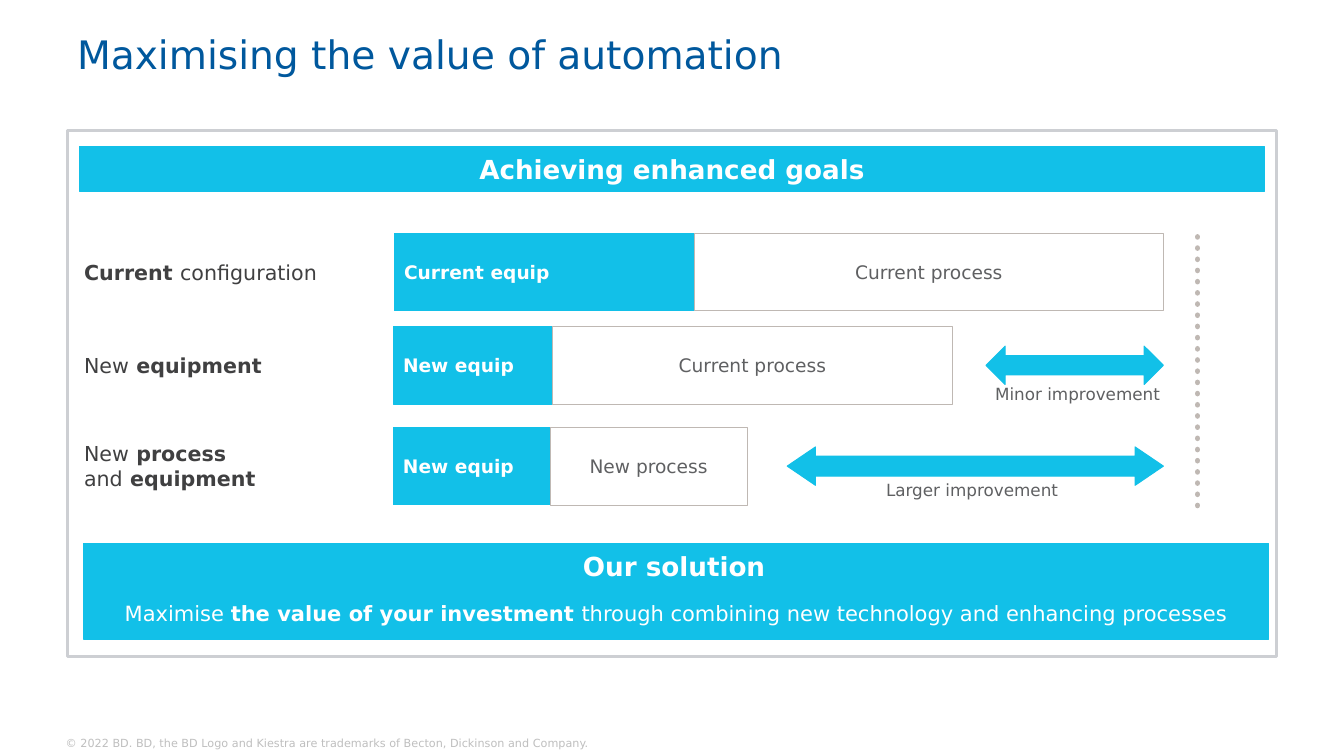
from lxml import etree
from pptx import Presentation
from pptx.dml.color import RGBColor
from pptx.enum.dml import MSO_LINE
from pptx.enum.shapes import MSO_CONNECTOR, MSO_SHAPE
from pptx.enum.text import MSO_ANCHOR, PP_ALIGN
from pptx.oxml.ns import qn
from pptx.util import Pt

RECT, ARROW = MSO_SHAPE.RECTANGLE, MSO_SHAPE.LEFT_RIGHT_ARROW
STRAIGHT, DOTTED = MSO_CONNECTOR.STRAIGHT, MSO_LINE.ROUND_DOT
LEFT, CENTER = PP_ALIGN.LEFT, PP_ALIGN.CENTER
TOP, MIDDLE = MSO_ANCHOR.TOP, MSO_ANCHOR.MIDDLE

WHITE = RGBColor(0xFF, 0xFF, 0xFF)
CYAN = RGBColor(0x12, 0xC0, 0xE8)
NAVY = RGBColor(0x00, 0x58, 0x9D)
DARK = RGBColor(0x40, 0x40, 0x41)
GREY = RGBColor(0x5F, 0x60, 0x62)
TAUPE = RGBColor(0xBF, 0xB8, 0xB3)
FRAME = RGBColor(0xCD, 0xCF, 0xD3)
PALE = RGBColor(0xBF, 0xBF, 0xBF)

FONT = "DejaVu Sans"
PAD = (7.2, 7.2, 7.2, 7.2)
NO_PAD = (0, 0, 0, 0)
GOAL_X = 831


def write(sp, lines, size, color, align=CENTER, anchor=MIDDLE, inset=PAD, bold=False):
    """Fill a shape with lines, each a string or a list of (text, bold) runs."""
    tf = sp.text_frame
    tf.word_wrap = True
    tf.vertical_anchor = anchor
    tf.margin_left, tf.margin_top, tf.margin_right, tf.margin_bottom = map(Pt, inset)
    p = tf.paragraphs[0]
    p.alignment = align
    for i, line in enumerate([lines] if isinstance(lines, str) else lines):
        if i:
            p.add_line_break()
        for text, heavy in [(line, bold)] if isinstance(line, str) else line:
            r = p.add_run()
            r.text = text
            r.font.name, r.font.size, r.font.bold = FONT, Pt(size), heavy
            r.font.color.rgb = color


def add_text(s, box, lines, size, color, **fmt):
    """Add a text box."""
    write(s.shapes.add_textbox(*map(Pt, box)), lines, size, color, **fmt)


def add_block(s, box, fill=CYAN, line=CYAN, width=0.75, kind=RECT):
    """Add a flat shape; a fill of None leaves it open."""
    sp = s.shapes.add_shape(kind, *map(Pt, box))
    sp.shadow.inherit = False
    if fill is None:
        sp.fill.background()
    else:
        sp.fill.solid()
        sp.fill.fore_color.rgb = fill
    sp.line.color.rgb = line
    sp.line.width = Pt(width)
    return sp


def add_heading(s, box, text):
    """Add a cyan heading bar."""
    write(add_block(s, box), text, 18.7, WHITE, bold=True)


def add_solution(s, box):
    """Add the closing panel with its heading and message."""
    x, y, w, h = box
    add_block(s, box)
    add_heading(s, (x, y, w - 3, 32.4), "Our solution")
    message = [("Maximise ", False), ("the value of your investment ", True),
               ("through combining new technology and enhancing processes", False)]
    write(add_block(s, (x, y + 41, w, 18)), [message], 15, WHITE, inset=NO_PAD)


def add_row(s, box, label, equip, equip_w, process, process_w):
    """Add a label followed by its equipment and process bars."""
    x, y, bar_x, h = box
    add_text(s, (x, y, 214, h), label, 14.7, DARK, align=LEFT, inset=NO_PAD)
    write(add_block(s, (bar_x, y, equip_w, h)), equip, 13.3, WHITE, align=LEFT, bold=True)
    bar = add_block(s, (bar_x + equip_w, y, process_w, h), None, TAUPE, 0.5)
    write(bar, process, 13.3, GREY, inset=(7.2, 3.6, 7.2, 3.6))


def add_gain(s, box, adjust, caption, caption_box, align):
    """Add a double arrow, with a caption placed relative to it."""
    x, y, w, h = box
    dx, dy, cw, ch = caption_box
    add_text(s, (x + dx, y + dy, cw, ch), caption, 12, GREY, align=align, inset=NO_PAD)
    sp = add_block(s, box, kind=ARROW)
    for i, value in enumerate(adjust):
        sp.adjustments[i] = value


def add_goal_line(s, x, top, bottom):
    """Add the round dotted line that marks the starting point."""
    c = s.shapes.add_connector(STRAIGHT, Pt(x), Pt(top), Pt(x), Pt(bottom))
    c.line.color.rgb = TAUPE
    c.line.width = Pt(4)
    c.line.dash_style = DOTTED
    sp_pr = c._element.spPr
    sp_pr.find(qn("a:ln")).set("cap", "rnd")
    etree.SubElement(sp_pr, qn("a:effectLst"))


def add_comparison(s, box):
    """Add the three configurations and the improvements they bring."""
    x, y, w, h = box
    bar_h, arrow_h = 55.5, 27.4
    rows = [
        (0, 281.5, [[("Current ", True), ("configuration", False)]],
         "Current equip", 214.5, "Current process", 335),
        (66.7, 280.8, [[("New", False), (" equipment", True)]],
         "New equip", 113.8, "Current process", 285.8),
        (138.7, 280.8, [[("New", False), (" process", True)],
                        [("and", False), (" equipment", True)]],
         "New equip", 112.3, "New process", 140.4),
    ]
    for dy, bar_x, *parts in rows:
        add_row(s, (x, y + dy, bar_x, bar_h), *parts)
    gains = [
        (rows[1][0], 126.7, (0.5, 0.5), "Minor improvement", (-5.1, 6.5, 141.1, bar_h), CENTER),
        (rows[2][0], 268.7, (0.526, 0.737), "Larger improvement", (70.6, 2.9, 187, bar_h), LEFT),
    ]
    for dy, length, *parts in gains:
        top = y + dy + (bar_h - arrow_h) / 2
        add_gain(s, (GOAL_X - length, top, length, arrow_h), *parts)
    add_goal_line(s, x + w, y + 2.7, y + h)


def main():
    """Build the slide and save it."""
    prs = Presentation()
    prs.slide_width, prs.slide_height = Pt(960), Pt(540)
    s = prs.slides.add_slide(prs.slide_layouts[6])
    add_block(s, (48, 93, 864, 376), WHITE, FRAME, 2)
    add_heading(s, (57, 104.4, 846, 32.4), "Achieving enhanced goals")
    add_solution(s, (60, 388, 846, 69))
    add_comparison(s, (60, 166.5, 795.4, 196.4))
    add_text(s, (48, 0, 864, 83.5), "Maximising the value of automation", 28, NAVY,
             align=LEFT, anchor=TOP, inset=(7.2, 21.6, 7.2, 3.6))
    add_text(s, (39.8, 522.7, 848, 16.6),
             "© 2022 BD. BD, the BD Logo and Kiestra are trademarks of Becton, "
             "Dickinson and Company.", 8, PALE,
             align=LEFT, anchor=TOP, inset=(7.2, 3.6, 7.2, 3.6))
    prs.save("out.pptx")


if __name__ == "__main__":
    main()
